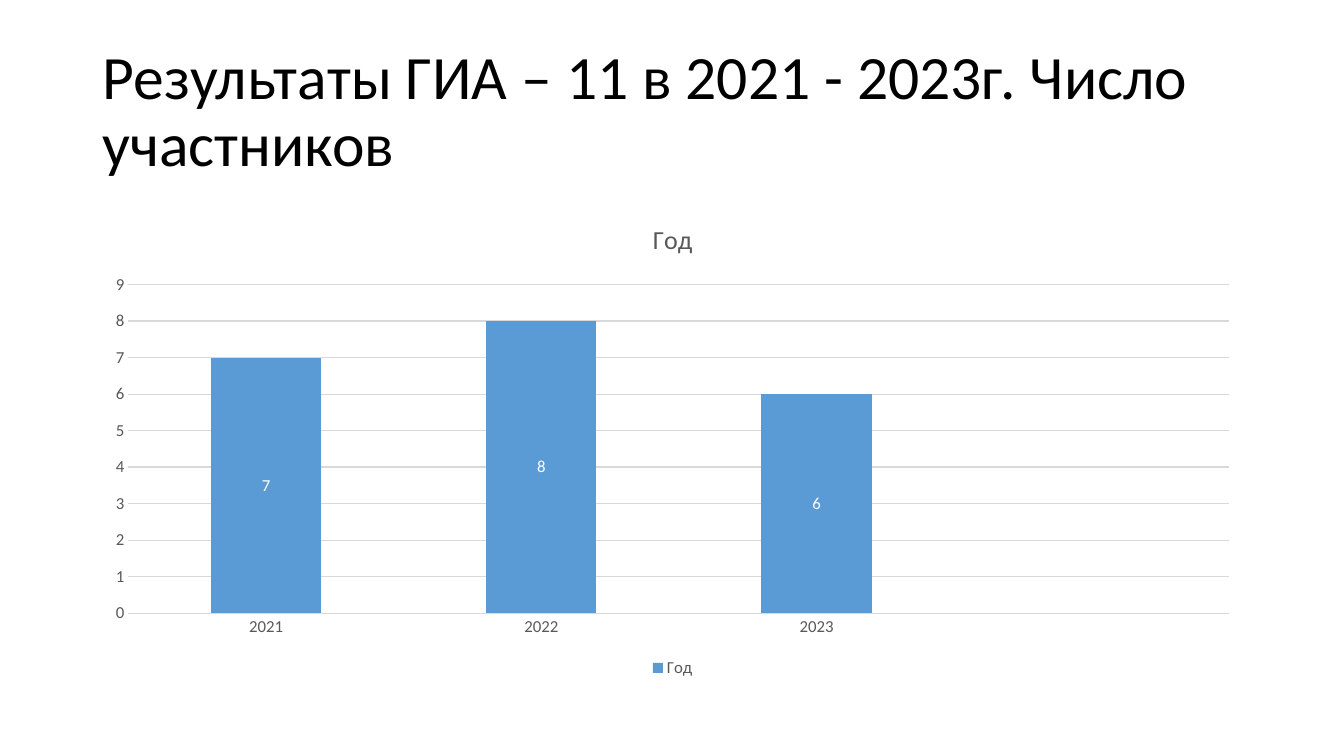
from dataclasses import dataclass

from pptx import Presentation
from pptx.chart.data import CategoryChartData
from pptx.dml.color import RGBColor
from pptx.enum.chart import XL_CHART_TYPE, XL_LABEL_POSITION, XL_LEGEND_POSITION, XL_TICK_MARK
from pptx.enum.text import MSO_ANCHOR
from pptx.util import Inches, Pt


@dataclass(frozen=True)
class Theme:
    face: str = "Calibri"
    ink: str = "000000"
    muted: str = "595959"
    rule: str = "D9D9D9"
    bar: str = "5B9BD5"
    on_bar: str = "FFFFFF"
    heading_size: float = 44
    chart_title_size: float = 18.6
    label_size: float = 12
    rule_width: float = 0.75


THEME = Theme()
WIDTH, HEIGHT = Inches(13.33), Inches(7.5)
LEFT, SPAN = 0.069, 0.863  # shares of the slide width
HEADING_TOP, HEADING_HEIGHT = 0.053, 0.193  # shares of the slide height
CHART_TOP, CHART_HEIGHT = 0.267, 0.635

HEADING = "Результаты ГИА – 11 в 2021 - 2023г. Число участников"
SERIES = "Год"
PARTICIPANTS = {"2021": 7, "2022": 8, "2023": 6, "": None}


def frame(top, height):
    """Turn shares of the slide height into a full-column position and size."""
    return [int(share) for share in (LEFT * WIDTH, top * HEIGHT, SPAN * WIDTH, height * HEIGHT)]


def apply(target, values):
    for name, value in values.items():
        setattr(target, name, value)


def style_font(font, size, color):
    apply(font, {"name": THEME.face, "size": Pt(size), "bold": False})
    font.color.rgb = RGBColor.from_string(color)


def style_rule(line):
    line.color.rgb = RGBColor.from_string(THEME.rule)
    line.width = Pt(THEME.rule_width)


def add_heading(page):
    text_frame = page.shapes.add_textbox(*frame(HEADING_TOP, HEADING_HEIGHT)).text_frame
    apply(text_frame, {"word_wrap": True, "vertical_anchor": MSO_ANCHOR.MIDDLE})
    para = text_frame.paragraphs[0]
    para.line_spacing = 0.9
    span = para.add_run()
    span.text = HEADING
    style_font(span.font, THEME.heading_size, THEME.ink)


def style_axes(chart):
    for axis in (chart.category_axis, chart.value_axis):
        apply(axis, {"major_tick_mark": XL_TICK_MARK.NONE, "minor_tick_mark": XL_TICK_MARK.NONE})
        style_font(axis.tick_labels.font, THEME.label_size, THEME.muted)
    style_rule(chart.category_axis.format.line)
    chart.value_axis.format.line.fill.background()
    apply(chart.value_axis, {"minimum_scale": 0, "maximum_scale": 9, "major_unit": 1})
    style_rule(chart.value_axis.major_gridlines.format.line)


def style_bars(plot):
    apply(plot, {"gap_width": 150, "overlap": 100, "vary_by_categories": False})
    bars = plot.series[0]
    bars.format.fill.solid()
    bars.format.fill.fore_color.rgb = RGBColor.from_string(THEME.bar)
    labels = bars.data_labels
    apply(labels, {"show_value": True, "position": XL_LABEL_POSITION.CENTER})
    style_font(labels.font, THEME.label_size, THEME.on_bar)


def add_participants_chart(page):
    data = CategoryChartData()
    data.categories = list(PARTICIPANTS)
    data.add_series(SERIES, PARTICIPANTS.values())
    chart = page.shapes.add_chart(
        XL_CHART_TYPE.COLUMN_STACKED, *frame(CHART_TOP, CHART_HEIGHT), data
    ).chart
    style_font(chart.font, THEME.label_size, THEME.muted)
    title = chart.chart_title.text_frame
    title.text = SERIES
    style_font(title.paragraphs[0].runs[0].font, THEME.chart_title_size, THEME.muted)
    chart.has_legend = True
    apply(chart.legend, {"position": XL_LEGEND_POSITION.BOTTOM, "include_in_layout": False})
    style_font(chart.legend.font, THEME.label_size, THEME.muted)
    style_axes(chart)
    style_bars(chart.plots[0])


def main():
    deck = Presentation()
    apply(deck, {"slide_width": WIDTH, "slide_height": HEIGHT})
    page = deck.slides.add_slide(deck.slide_layouts[6])
    add_heading(page)
    add_participants_chart(page)
    deck.save("out.pptx")


if __name__ == "__main__":
    main()
